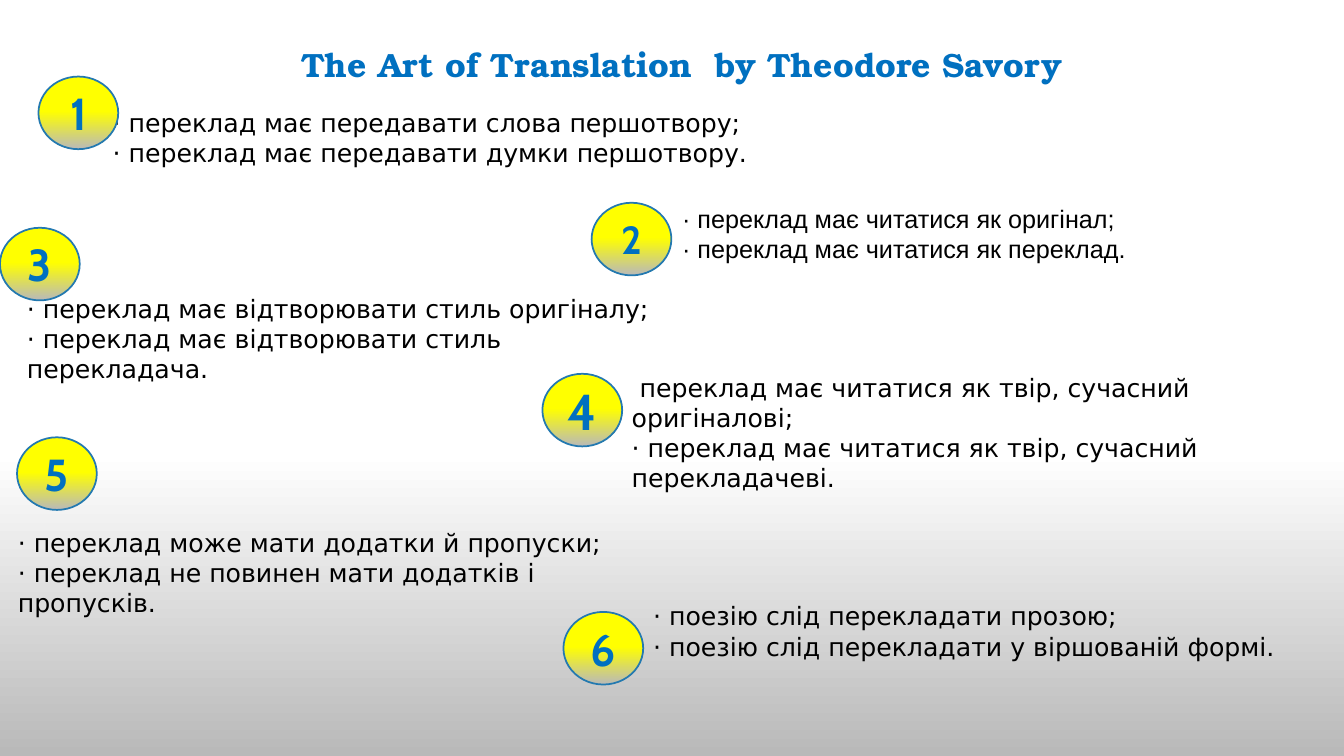
from dataclasses import dataclass

from pptx import Presentation
from pptx.dml.color import RGBColor
from pptx.dml.fill import FillFormat
from pptx.enum.shapes import MSO_SHAPE
from pptx.enum.text import MSO_ANCHOR, MSO_AUTO_SIZE, PP_ALIGN
from pptx.slide import Slide
from pptx.text.text import Font
from pptx.util import Cm, Pt

BLUE, OUTLINE, BLACK = "0070C0", "2379B0", "000000"
WHITE, YELLOW, GREY = "FFFFFF", "FFFF00", "B9B9B9"
BADGE_WIDTH, BADGE_HEIGHT = 2.01, 1.83
TEXT_WIDTH = 16.94


@dataclass
class Principle:
    """A pair of opposed statements and its numbered badge, in centimetres."""
    badge_at: tuple[float, float]
    text_at: tuple[float, float]
    text_height: float
    statements: list[str]
    font_name: str = "DejaVu Sans"
    number_size: int = 32


PRINCIPLES = [
    Principle((0.97, 1.93), (2.59, 2.57), 1.8,
              ["· переклад має передавати слова першотвору;",
               "· переклад має передавати думки першотвору."]),
    Principle((14.91, 5.11), (16.94, 5), 1.8,
              ["· переклад має читатися як оригінал;",
               "· переклад має читатися як переклад."],
              font_name="Arial", number_size=28),
    Principle((0, 5.74), (0.43, 7.26), 1.8,
              ["· переклад має відтворювати стиль оригіналу;",
               "· переклад має відтворювати стиль перекладача."]),
    Principle((13.67, 9.42), (15.67, 9.25), 3.33,
              [" переклад має читатися як твір, сучасний оригіналові;",
               "· переклад має читатися як твір, сучасний перекладачеві."],
              number_size=36),
    Principle((0.43, 11.02), (0.2, 13.16), 2.57,
              ["· переклад може мати додатки й пропуски;",
               "· переклад не повинен мати додатків і пропусків."]),
    Principle((14.2, 15.42), (16.21, 15.01), 1.8,
              ["· поезію слід перекладати прозою;",
               "· поезію слід перекладати у віршованій формі."]),
]


def color(value: str) -> RGBColor:
    return RGBColor.from_string(value)


def set_gradient(fill: FillFormat, top: str, start: float) -> None:
    """Fade downwards from the top colour, held until start, to grey."""
    fill.gradient()
    fill.gradient_angle = 270
    for stop, value, position in zip(fill.gradient_stops, (top, GREY), (start, 1)):
        stop.color.rgb = color(value)
        stop.position = position


def set_font(font: Font, name: str, size: int, value: str, bold: bool = False) -> None:
    font.name = name
    font.size = Pt(size)
    font.bold = bold
    font.color.rgb = color(value)


def add_text(slide: Slide, at: tuple[float, float], width: float, height: float,
             lines: list[str], name: str, size: int, value: str,
             bold: bool = False) -> None:
    text_box = slide.shapes.add_textbox(Cm(at[0]), Cm(at[1]), Cm(width), Cm(height))
    text_frame = text_box.text_frame
    text_frame.word_wrap = True
    text_frame.auto_size = MSO_AUTO_SIZE.SHAPE_TO_FIT_TEXT
    text_frame.text = "\n".join(lines)
    for paragraph in text_frame.paragraphs:
        for run in paragraph.runs:
            set_font(run.font, name, size, value, bold)


def add_badge(slide: Slide, number: int, principle: Principle) -> None:
    left, top = principle.badge_at
    shape = slide.shapes.add_shape(MSO_SHAPE.OVAL, Cm(left), Cm(top),
                                   Cm(BADGE_WIDTH), Cm(BADGE_HEIGHT))
    shape.shadow.inherit = False
    set_gradient(shape.fill, YELLOW, 0.48)
    shape.line.color.rgb = color(OUTLINE)
    shape.line.width = Pt(1.25)
    text_frame = shape.text_frame
    text_frame.vertical_anchor = MSO_ANCHOR.MIDDLE
    text_frame.text = str(number)
    paragraph = text_frame.paragraphs[0]
    paragraph.alignment = PP_ALIGN.CENTER
    set_font(paragraph.runs[0].font, "Cabin", principle.number_size, BLUE, bold=True)


def main() -> None:
    presentation = Presentation()
    presentation.slide_width, presentation.slide_height = Cm(33.87), Cm(19.05)
    slide = presentation.slides.add_slide(presentation.slide_layouts[6])
    set_gradient(slide.background.fill, WHITE, 0.6)

    # Title
    add_text(slide, (7.34, 0.97), 21.84, 1.27,
             ["The Art of Translation  by Theodore Savory"],
             "TeX Gyre Bonum", 24, BLUE, bold=True)

    # Statements, then the badges on top of them
    for principle in PRINCIPLES:
        add_text(slide, principle.text_at, TEXT_WIDTH, principle.text_height,
                 principle.statements, principle.font_name, 18, BLACK)
    for number, principle in enumerate(PRINCIPLES, start=1):
        add_badge(slide, number, principle)

    presentation.save("out.pptx")


if __name__ == "__main__":
    main()
